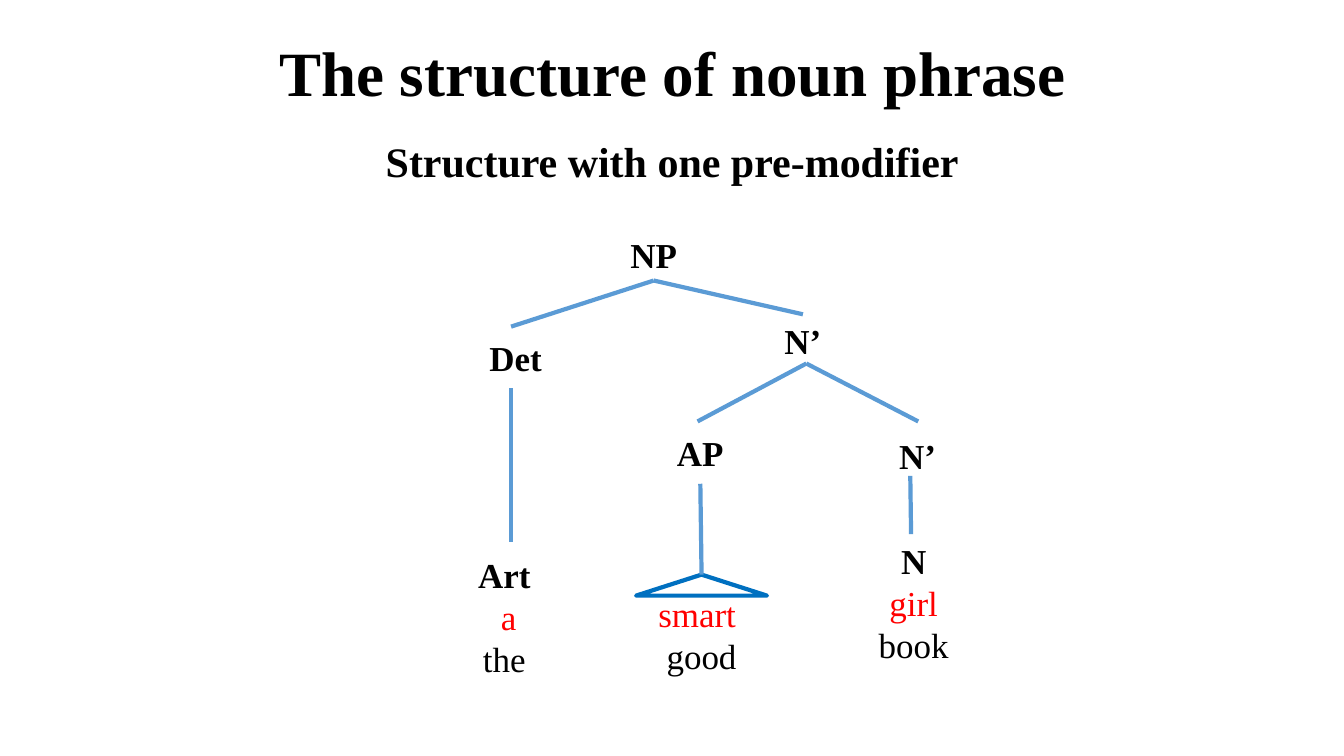
from dataclasses import dataclass

import pptx
import pptx.dml.color
import pptx.enum.shapes
import pptx.enum.text
import pptx.util
from lxml import etree
from pptx.oxml import ns

Cm, Pt = pptx.util.Cm, pptx.util.Pt
FACE = "Times New Roman"
BLACK, RED = "000000", "FF0000"
SKY, BLUE = "5B9BD5", "0070C0"


@dataclass
class Line:
    text: str
    bold: bool = True
    color: str = BLACK


@dataclass
class Node:
    name: str
    box: tuple[float, float, float, float]
    lines: list[Line]


@dataclass
class Branch:
    start: tuple[float, float]
    end: tuple[float, float]
    top: str = ""    # node whose bottom middle starts the branch
    foot: str = ""   # node whose top middle ends the branch


NODES = [
    Node("NP", (15.37, 5.77, 2.21, 1.3), [Line("NP")]),
    Node("bar", (18.24, 7.92, 3.99, 1.3), [Line("N’")]),
    Node("low bar", (22.02, 10.69, 2.21, 1.57), [Line("N’")]),
    Node("AP", (16.54, 10.62, 2.21, 1.57), [Line("AP")]),
    Node("Det", (11, 8.36, 3.99, 1.3), [Line("Det")]),
    Node("noun", (21.59, 13.67, 2.87, 3.02),
         [Line("N"), Line("girl", False, RED), Line("book", False)]),
    Node("words", (16.03, 15.09, 3.3, 1.78),
         [Line("smart ", False, RED), Line("good", False)]),
    Node("Art", (11.4, 14.38, 2.84, 2.29),
         [Line("Art "), Line("a", False, RED), Line("the ", False)]),
]

BRANCHES = [
    Branch((16.51, 7.04), (12.88, 8.23), top="NP"),
    Branch((16.46, 7.04), (20.22, 7.92), top="NP", foot="bar"),
    Branch((20.32, 9.16), (17.58, 10.62)),
    Branch((20.32, 9.16), (23.14, 10.62)),
    Branch((22.94, 11.99), (22.96, 13.46)),
    Branch((17.65, 12.19), (17.68, 14.48), foot="roof"),
    Branch((12.88, 9.78), (12.88, 13.67)),
]


def paint(target, color: str) -> None:
    target.rgb = pptx.dml.color.RGBColor.from_string(color)


def style(para, line: Line, size: float) -> None:
    para.text = line.text
    para.alignment = pptx.enum.text.PP_ALIGN.CENTER
    para.font.name = FACE
    para.font.size = Pt(size)
    para.font.bold = line.bold
    paint(para.font.color, line.color)


def stroke(shape, color: str) -> None:
    shape.line.width = Pt(3)
    paint(shape.line.color, color)


def place(shape, box: tuple[float, float, float, float]) -> None:
    shape.left, shape.top, shape.width, shape.height = map(Cm, box)


def label(slide, node: Node):
    shape = slide.shapes.add_textbox(*map(Cm, node.box))
    frame = shape.text_frame
    frame.word_wrap = True
    frame.vertical_anchor = pptx.enum.text.MSO_ANCHOR.MIDDLE
    for i, line in enumerate(node.lines):
        para = frame.add_paragraph() if i else frame.paragraphs[0]
        style(para, line, 25)
    return shape


def link(slide, branch: Branch, shapes: dict) -> None:
    wire = slide.shapes.add_connector(
        pptx.enum.shapes.MSO_CONNECTOR.STRAIGHT,
        *map(Cm, branch.start + branch.end))
    if branch.top:
        wire.begin_connect(shapes[branch.top], 2)
    if branch.foot:
        wire.end_connect(shapes[branch.foot], 0)
    stroke(wire, SKY)
    etree.SubElement(wire._element.spPr, ns.qn("a:effectLst"))


def main() -> None:
    deck = pptx.Presentation()
    deck.slide_width, deck.slide_height = Cm(33.87), Cm(19.05)
    slide = deck.slides.add_slide(deck.slide_layouts[1])

    # Title and subtitle
    title, body = slide.placeholders
    place(title, (2.34, 1.02, 29.21, 1.78))
    title.text_frame.vertical_anchor = pptx.enum.text.MSO_ANCHOR.MIDDLE
    head = title.text_frame.paragraphs[0]
    style(head, Line("The structure of noun phrase"), 45)
    head.line_spacing = 0.9

    place(body, (2.34, 3.43, 29.21, 15.04))
    sub = body.text_frame.paragraphs[0]
    style(sub, Line("Structure with one pre-modifier"), 30)
    sub.line_spacing = 0.9
    sub.space_before = Pt(10)
    props = sub._p.get_or_add_pPr()
    props.set("marL", "0")
    props.set("indent", "0")
    etree.SubElement(props, ns.qn("a:buNone"))
    props.append(props.find(ns.qn("a:defRPr")))  # schema order: bullet first

    # Tree labels
    shapes = {node.name: label(slide, node) for node in NODES}

    # Triangle above the adjectives
    roof = slide.shapes.add_shape(
        pptx.enum.shapes.MSO_SHAPE.ISOSCELES_TRIANGLE,
        *map(Cm, (16.03, 14.48, 3.3, 0.53)))
    roof.shadow.inherit = False
    roof.fill.background()
    stroke(roof, BLUE)
    shapes["roof"] = roof

    # Branches
    for branch in BRANCHES:
        link(slide, branch, shapes)

    deck.save("out.pptx")


if __name__ == "__main__":
    main()
